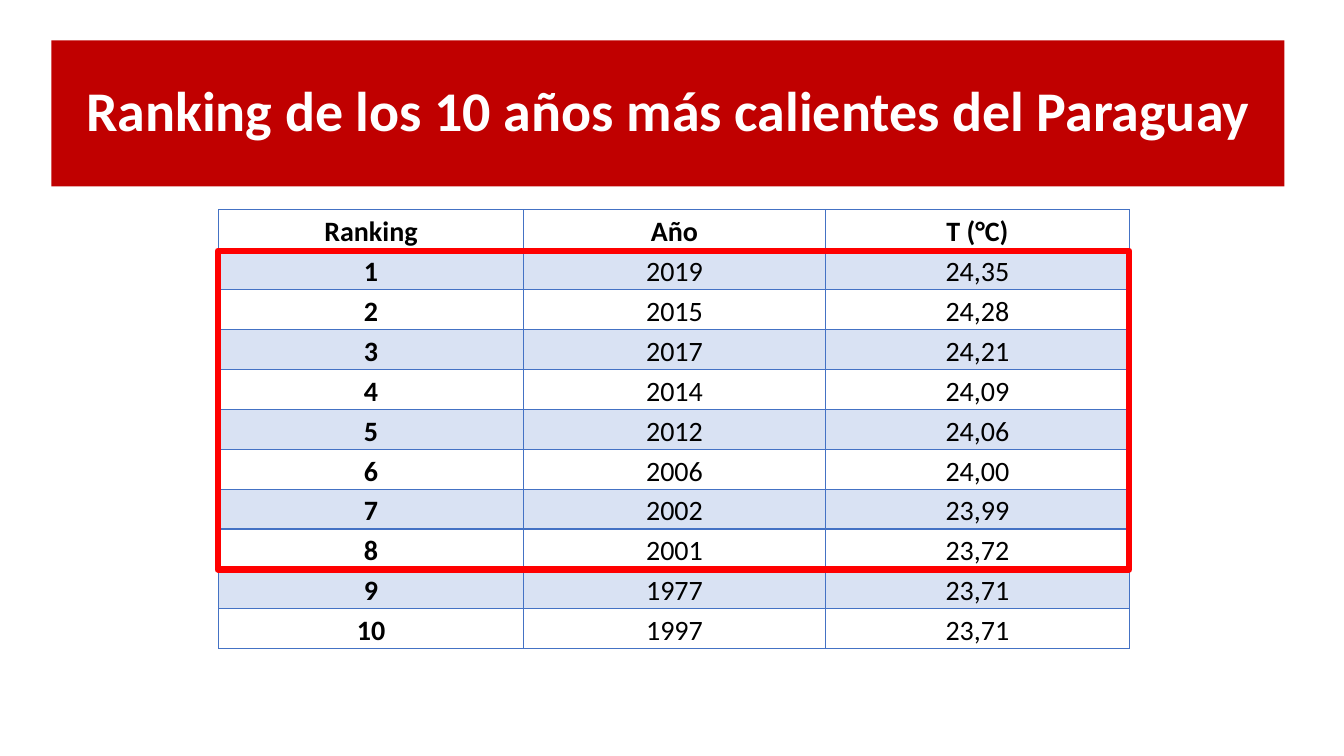
"""Build the slide that ranks the ten hottest years in Paraguay."""
import lxml.etree
import pptx
import pptx.dml.color
import pptx.enum.shapes
import pptx.enum.text
import pptx.oxml.ns
import pptx.util

Inches = pptx.util.Inches
Pt = pptx.util.Pt
qn = pptx.oxml.ns.qn
RGB = pptx.dml.color.RGBColor.from_string

TITLE = "Ranking de los 10 años más calientes del Paraguay"
HEADER = ("Ranking", "Año", "T (°C)")
YEARS = [
    ("2019", "24,35"),
    ("2015", "24,28"),
    ("2017", "24,21"),
    ("2014", "24,09"),
    ("2012", "24,06"),
    ("2006", "24,00"),
    ("2002", "23,99"),
    ("2001", "23,72"),
    ("1977", "23,71"),
    ("1997", "23,71"),
]
THEME = {
    "font": "Calibri", "title_size": 40, "table_size": 20,
    "banner": "C00000", "title": "FFFFFF", "text": "000000",
    "grid": "4472C4", "band_alpha": 20, "highlight": "FF0000",
}
TITLE_BOX = (0.51, 0.4, 12.23, 1.45)
TABLE_BOX = (2.17, 2.08, 9.03, 4.36)
COLUMNS = (3.02, 3, 3.01)
HIGHLIGHT_BOX = (2.16, 2.49, 9.04, 3.16)


def write(tf, text, size, color, bold, spacing):
    tf.text = text
    p = tf.paragraphs[0]
    p.alignment = pptx.enum.text.PP_ALIGN.CENTER
    p.line_spacing = spacing
    font = p.runs[0].font
    formats = {"name": THEME["font"], "size": Pt(size), "bold": bold}
    for name, value in formats.items():
        setattr(font, name, value)
    font.color.rgb = RGB(color)


def add_border(tc_pr, side, width):
    line = lxml.etree.SubElement(tc_pr, qn("a:ln" + side), w=str(Pt(width)))
    fill = lxml.etree.SubElement(line, qn("a:solidFill"))
    lxml.etree.SubElement(fill, qn("a:srgbClr"), val=THEME["grid"])


def format_cell(cell, text, row, col):
    write(cell.text_frame, text, THEME["table_size"], THEME["text"],
          row == 0 or col == 0, 1.15)
    margins = {"margin_left": 0.07, "margin_right": 0.07,
               "margin_top": 0, "margin_bottom": 0}
    for name, value in margins.items():
        setattr(cell, name, Inches(value))
    tc_pr = cell._tc.get_or_add_tcPr()
    for side in "LRTB":
        add_border(tc_pr, side, 2 if row == 0 and side == "B" else 1)
    if row % 2:
        cell.fill.solid()
        cell.fill.fore_color.rgb = RGB(THEME["grid"])
        color = tc_pr.find(qn("a:solidFill")).find(qn("a:srgbClr"))
        lxml.etree.SubElement(color, qn("a:alpha"),
                              val=str(THEME["band_alpha"] * 1000))
    else:
        cell.fill.background()


def add_title(s):
    sp = s.shapes.title
    for name, value in zip(("left", "top", "width", "height"), TITLE_BOX):
        setattr(sp, name, Inches(value))
    sp.fill.solid()
    sp.fill.fore_color.rgb = RGB(THEME["banner"])
    tf = sp.text_frame
    formats = {"word_wrap": True,
               "auto_size": pptx.enum.text.MSO_AUTO_SIZE.NONE,
               "vertical_anchor": pptx.enum.text.MSO_ANCHOR.MIDDLE}
    for name, value in formats.items():
        setattr(tf, name, value)
    write(tf, TITLE, THEME["title_size"], THEME["title"], True, 0.9)


def add_ranking(s):
    rows = [HEADER] + [(str(rank), *year) for rank, year in enumerate(YEARS, 1)]
    table = s.shapes.add_table(len(rows), len(HEADER),
                               *map(Inches, TABLE_BOX)).table
    table.first_row = False
    table.horz_banding = False
    for column, width in zip(table.columns, COLUMNS):
        column.width = Inches(width)
    for r, values in enumerate(rows):
        table.rows[r].height = Inches(TABLE_BOX[3] / len(rows))
        for c, text in enumerate(values):
            format_cell(table.cell(r, c), text, r, c)


def add_highlight(s):
    sp = s.shapes.add_shape(pptx.enum.shapes.MSO_SHAPE.RECTANGLE,
                            *map(Inches, HIGHLIGHT_BOX))
    sp.shadow.inherit = False
    sp.fill.background()
    sp.line.color.rgb = RGB(THEME["highlight"])
    sp.line.width = Pt(4.5)


def main():
    prs = pptx.Presentation()
    prs.slide_width = Inches(13.33)
    prs.slide_height = Inches(7.5)
    s = prs.slides.add_slide(prs.slide_layouts[5])
    add_title(s)
    add_ranking(s)
    add_highlight(s)
    prs.save("out.pptx")


if __name__ == "__main__":
    main()
